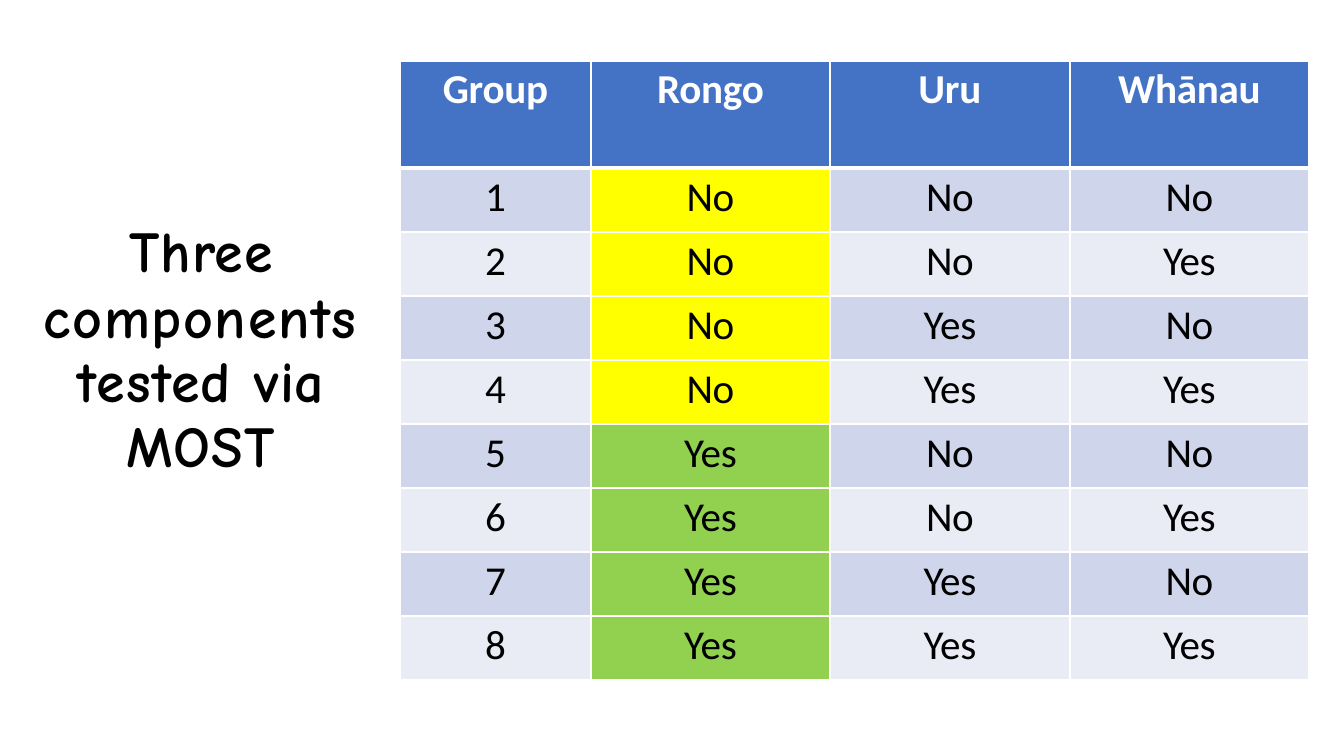
from itertools import product

from lxml.etree import SubElement
from pptx import Presentation
from pptx.dml.color import RGBColor
from pptx.enum.text import MSO_ANCHOR, MSO_AUTO_SIZE, PP_ALIGN
from pptx.oxml.ns import qn
from pptx.util import Pt

EMU_PER_PX = 914400 / 134.4
HEADINGS = ("Group", "Rongo", "Uru", "Whānau")
COLUMN_WIDTHS = (191, 239, 240, 239)
HEADER_HEIGHT, ROW_HEIGHT = 107, 64
BANDS = ("CFD5EA", "E9EBF5")
RONGO_FILLS = {"No": "FFFF00", "Yes": "92D050"}
TITLE_LINES = (
    (Pt(35.6), 1.4, (("Three", 60),)),
    (0.93, 1.2, (("components ", 90), ("tested ", 80), ("via ", 30), ("MOST", 80))),
)


def px(length):
    return round(length * EMU_PER_PX)


def color(hex_value):
    return RGBColor.from_string(hex_value)


def format_paragraph(paragraph, font_name, size, hex_color, bold, space_before):
    paragraph.alignment = PP_ALIGN.CENTER
    paragraph.space_before = Pt(space_before)
    font = paragraph.font
    font.name, font.size, font.bold = font_name, Pt(size), bold
    font.color.rgb = color(hex_color)


def add_spaced_run(paragraph, text, spacing):
    """Add a run with letter spacing in hundredths of a point."""
    run = paragraph.add_run()
    run.text = text
    run.font._element.set("spc", str(spacing))


def set_margins(box, top):
    box.margin_left = box.margin_right = box.margin_bottom = 0
    box.margin_top = px(top)


def place_title(title, left, top, width, height):
    title.left, title.top = px(left), px(top)
    title.width, title.height = px(width), px(height)
    frame = title.text_frame
    frame.word_wrap = True
    frame.auto_size = MSO_AUTO_SIZE.NONE
    frame.vertical_anchor = MSO_ANCHOR.TOP
    set_margins(frame, 2)
    for index, (line_spacing, space_before, runs) in enumerate(TITLE_LINES):
        paragraph = frame.add_paragraph() if index else frame.paragraphs[0]
        format_paragraph(paragraph, "Comic Neue", 31, "000000", True, space_before)
        paragraph.line_spacing = line_spacing
        for text, spacing in runs:
            add_spaced_run(paragraph, text, spacing)


def set_borders(cell, top, bottom):
    """Draw white borders, 1 pt at the sides and the given points above and below."""
    properties = cell._tc.get_or_add_tcPr()
    for tag, width in (("a:lnL", 1), ("a:lnR", 1), ("a:lnT", top), ("a:lnB", bottom)):
        line = SubElement(properties, qn(tag), w=str(Pt(width)))
        fill = SubElement(line, qn("a:solidFill"))
        SubElement(fill, qn("a:srgbClr"), val="FFFFFF")


def fill_cell(cell, text, row, column):
    is_header = row == 0
    set_borders(cell, 3 if row == 1 else 1, 3 if is_header else 1)
    if is_header:
        fill = "4472C4"
    elif column == 1:
        fill = RONGO_FILLS[text]
    else:
        fill = BANDS[(row - 1) % 2]
    cell.fill.solid()
    cell.fill.fore_color.rgb = color(fill)
    set_margins(cell, 4 if is_header else 5)
    paragraph = cell.text_frame.paragraphs[0]
    format_paragraph(paragraph, "Calibri", 22, "FFFFFF" if is_header else "000000",
                     is_header, 2.5 if is_header else 2.6)
    if is_header:
        spacing = -10
    else:
        spacing = -20 if column else 0
    add_spaced_run(paragraph, text, spacing)


def add_group_table(slide, left, top):
    """List every No/Yes combination of the three components."""
    combinations = product(("No", "Yes"), repeat=3)
    rows = [HEADINGS] + [(str(group), *answers)
                         for group, answers in enumerate(combinations, 1)]
    height = HEADER_HEIGHT + ROW_HEIGHT * (len(rows) - 1)
    table = slide.shapes.add_table(len(rows), len(HEADINGS), px(left), px(top),
                                   px(sum(COLUMN_WIDTHS)), px(height)).table
    for column, width in zip(table.columns, COLUMN_WIDTHS):
        column.width = px(width)
    for row, texts in enumerate(rows):
        table.rows[row].height = px(ROW_HEIGHT if row else HEADER_HEIGHT)
        for column, text in enumerate(texts):
            fill_cell(table.cell(row, column), text, row, column)


def main():
    presentation = Presentation()
    presentation.slide_width, presentation.slide_height = px(1344), px(756)
    slide = presentation.slides.add_slide(presentation.slide_layouts[5])
    place_title(slide.shapes.title, 31, 216, 340, 266)
    add_group_table(slide, 400, 61)
    presentation.save("out.pptx")


if __name__ == "__main__":
    main()
